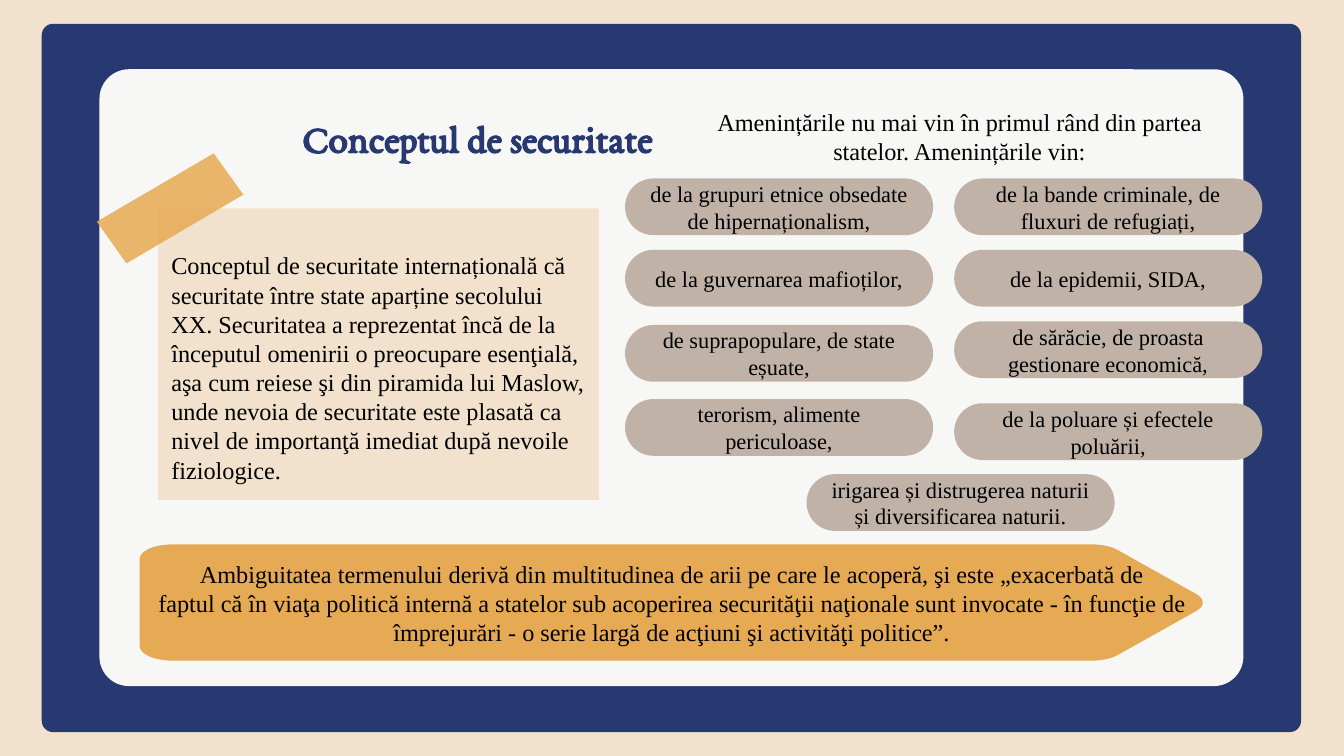
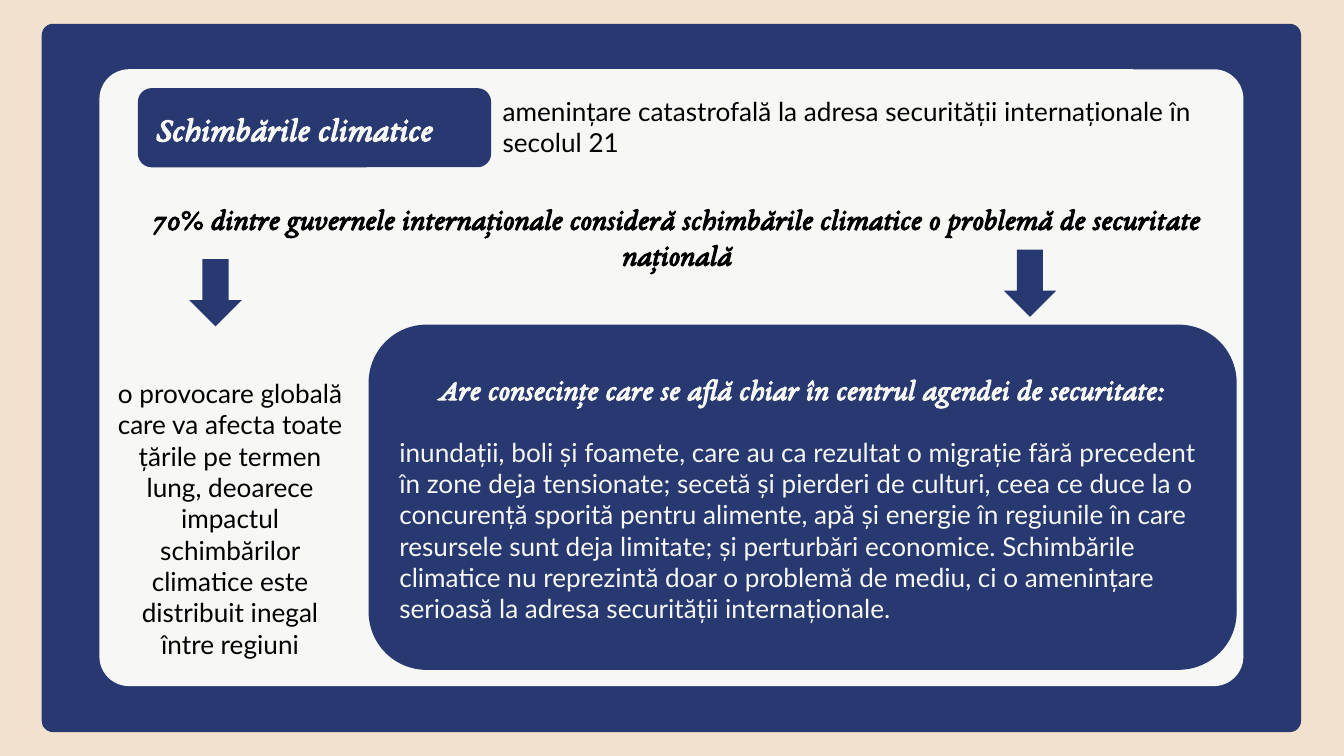
from lxml.etree import SubElement
from pptx import Presentation
from pptx.dml.color import RGBColor
from pptx.enum.shapes import MSO_SHAPE as Shape
from pptx.enum.text import MSO_ANCHOR as Anchor, PP_ALIGN as Align
from pptx.oxml.ns import qn
from pptx.util import Cm, Pt

CREAM = "F2E1CC"
NAVY = "273970"
PAPER = "F7F7F5"
ORANGE = "E6AA54"
TAUPE = "C0B2A7"
BLACK = "000000"

TITLE_FONT = "EB Garamond"
BODY_FONT = "Lato"
SERIF_FONT = "Times New Roman"

INSET = 0.25
PILL_WIDTH, PILL_HEIGHT = 5.77, 1.02
THREATS = [
    (11.84, 3.4, "de la grupuri etnice obsedate de hipernaționalism,"),
    (11.84, 4.75, "de la guvernarea mafioților,"),
    (11.84, 6.17, "de suprapopulare, de state eșuate,"),
    (11.84, 7.57, "terorism, alimente periculoase,"),
    (18.06, 3.4, "de la bande criminale, de fluxuri de refugiați,"),
    (18.06, 4.75, "de la epidemii, SIDA,"),
    (18.06, 6.1, "de sărăcie, de proasta gestionare economică,"),
    (18.06, 7.65, "de la poluare și efectele poluării,"),
    (15.27, 8.99, "irigarea și distrugerea naturii și diversificarea naturii."),
]


def paint(target, colour):
    if hasattr(target, "solid"):
        target.solid()
        target = target.fore_color
    target.rgb = RGBColor.from_string(colour)


def style_shape(shape, colour, line_width=0):
    shape.shadow.inherit = False
    paint(shape.fill, colour)
    if line_width:
        paint(shape.line.fill, colour)
        shape.line.width = Pt(line_width)
    else:
        shape.line.fill.background()


def add_block(slide, kind, box, colour, line_width=0, corner=None):
    shape = slide.shapes.add_shape(kind, *map(Cm, box))
    style_shape(shape, colour, line_width)
    if corner is not None:
        shape.adjustments[0] = corner
    return shape


def add_outline(slide, points, colour):
    points = [(Cm(x), Cm(y)) for x, y in points]
    builder = slide.shapes.build_freeform(*points[0], scale=1.0)
    builder.add_line_segments(points[1:], close=True)
    shape = builder.convert_to_shape()
    style_shape(shape, colour)
    return shape


def curve(start, first, second, end, steps=8):
    points = []
    for step in range(steps + 1):
        t = step / steps
        weights = ((1 - t) ** 3, 3 * t * (1 - t) ** 2, 3 * t * t * (1 - t), t ** 3)
        points.append(tuple(
            sum(weight * value for weight, value in zip(weights, values))
            for values in zip(start, first, second, end)))
    return points


def write(shape, text, font, size, colour, align=Align.LEFT, anchor=Anchor.TOP,
          bold=False, italic=False):
    frame = shape.text_frame
    frame.word_wrap = True
    frame.vertical_anchor = anchor
    frame.margin_left = frame.margin_right = Cm(INSET)
    frame.margin_top = frame.margin_bottom = Cm(INSET)
    paragraph = frame.add_paragraph() if frame.text else frame.paragraphs[0]
    paragraph.text = text
    paragraph.alignment = align
    paragraph.font.name = font
    paragraph.font.size = Pt(size)
    paragraph.font.bold = bold
    paragraph.font.italic = italic
    paint(paragraph.font.color, colour)
    return paragraph


def add_text(slide, box, *text, **style):
    write(slide.shapes.add_textbox(*map(Cm, box)), *text, **style)


def add_pill(slide, left, top, text):
    pill = add_block(slide, Shape.ROUNDED_RECTANGLE,
                     (left, top, PILL_WIDTH, PILL_HEIGHT), TAUPE, 1.5, 0.5)
    write(pill, text, SERIF_FONT, 12, BLACK, Align.CENTER, Anchor.MIDDLE)


def add_tape(slide):
    tape = add_outline(
        slide, [(1.83, 4.19), (2.39, 4.98), (4.6, 3.68), (4.04, 2.9)], ORANGE)
    colour = tape.fill._xPr.find(".//" + qn("a:srgbClr"))
    SubElement(colour, qn("a:alpha"), val="85000")


def add_banner(slide, text):
    middle = 11.39
    upper = (
        curve((2.64, 10.57), (2.64, 10.41), (2.92, 10.29), (3.28, 10.29))
        + curve((20.6, 10.29), (20.8, 10.29), (20.98, 10.32), (21.11, 10.39))
        + curve((22.61, 11.23), (22.69, 11.28), (22.73, 11.33), (22.73, middle)))
    lower = [(x, 2 * middle - y) for x, y in reversed(upper)]
    banner = add_outline(slide, upper + lower[1:], ORANGE)
    write(banner, text, SERIF_FONT, 13, BLACK, Align.CENTER, Anchor.MIDDLE)


def add_framed_slide(presentation):
    slide = presentation.slides.add_slide(presentation.slide_layouts[6])
    paint(slide.background.fill, CREAM)
    add_block(slide, Shape.ROUNDED_RECTANGLE, (0.79, 0.45, 23.8, 13.39), NAVY, corner=0.016)
    add_block(slide, Shape.ROUNDED_RECTANGLE, (1.88, 1.31, 21.62, 11.66), PAPER, corner=0.048)
    return slide


def build_concept(presentation):
    slide = add_framed_slide(presentation)
    add_text(slide, (1.52, 1.55, 15.01, 2.08), "Conceptul de securitate",
             TITLE_FONT, 21, NAVY, Align.CENTER, Anchor.MIDDLE, bold=True)
    note = add_block(slide, Shape.RECTANGLE, (2.99, 3.94, 8.33, 5.51), CREAM)
    write(note, "Conceptul de securitate internațională că securitate între state "
          "aparține secolului XX. Securitatea a reprezentat încă de la începutul "
          "omenirii o preocupare esenţială, aşa cum reiese şi din piramida lui Maslow, "
          "unde nevoia de securitate este plasată ca nivel de importanţă imediat după "
          "nevoile fiziologice.", SERIF_FONT, 13, BLACK)
    note.text_frame.margin_top = Cm(0.8)
    add_text(slide, (13, 1.78, 10.26, 1.63),
             "Amenințările nu mai vin în primul rând din partea statelor. "
             "Amenințările vin:", SERIF_FONT, 13, BLACK, Align.CENTER)
    add_banner(slide, "Ambiguitatea termenului derivă din multitudinea de arii pe care "
               "le acoperă, şi este „exacerbată de\vfaptul că în viaţa politică internă "
               "a statelor sub acoperirea securităţii naţionale sunt invocate - în "
               "funcţie de împrejurări - o serie largă de acţiuni şi activităţi politice”.")
    add_tape(slide)
    for left, top, text in THREATS:
        add_pill(slide, left, top, text)


def build_climate(presentation):
    slide = add_framed_slide(presentation)
    heading = add_block(slide, Shape.ROUNDED_RECTANGLE, (2.62, 1.68, 6.65, 1.47), NAVY, 0.75)
    write(heading, "Schimbările climatice", TITLE_FONT, 18, PAPER,
          anchor=Anchor.MIDDLE, bold=True, italic=True)
    add_text(slide, (9.25, 1.55, 14.1, 1.7),
             "amenințare catastrofală la adresa securității internaționale în secolul 21",
             BODY_FONT, 14, BLACK)
    add_text(slide, (2.62, 3.53, 20.35, 1.88),
             "70% dintre guvernele internaționale consideră schimbările climatice "
             "o problemă de securitate națională",
             TITLE_FONT, 16, BLACK, Align.CENTER, bold=True, italic=True)
    for left, top in ((3.58, 4.9), (18.97, 4.72)):
        add_block(slide, Shape.DOWN_ARROW, (left, top, 0.99, 1.27), NAVY)
    add_text(slide, (1.9, 6.88, 4.9, 5.89),
             "o provocare globală care va afecta toate țările pe termen lung, deoarece "
             "impactul schimbărilor climatice este distribuit inegal între regiuni",
             BODY_FONT, 14, BLACK, Align.CENTER)
    panel = add_block(slide, Shape.ROUNDED_RECTANGLE, (6.98, 6.15, 16.38, 6.5), NAVY, 0.75)
    write(panel, "Are consecințe care se află chiar în centrul agendei de securitate:",
          TITLE_FONT, 16, PAPER, Align.CENTER, Anchor.MIDDLE, bold=True, italic=True)
    consequences = write(
        panel, "inundații, boli și foamete, care au ca rezultat o migrație fără precedent "
        "în zone deja tensionate; secetă și pierderi de culturi, ceea ce duce la o "
        "concurență sporită pentru alimente, apă și energie în regiunile în care "
        "resursele sunt deja limitate; și perturbări economice. Schimbările climatice nu "
        "reprezintă doar o problemă de mediu, ci o amenințare serioasă la adresa "
        "securității internaționale.", BODY_FONT, 14, PAPER, anchor=Anchor.MIDDLE)
    consequences.space_before = Pt(16)


def main():
    presentation = Presentation()
    presentation.slide_width = Cm(25.4)
    presentation.slide_height = Cm(14.29)
    build_concept(presentation)
    build_climate(presentation)
    presentation.save("out.pptx")


if __name__ == "__main__":
    main()
